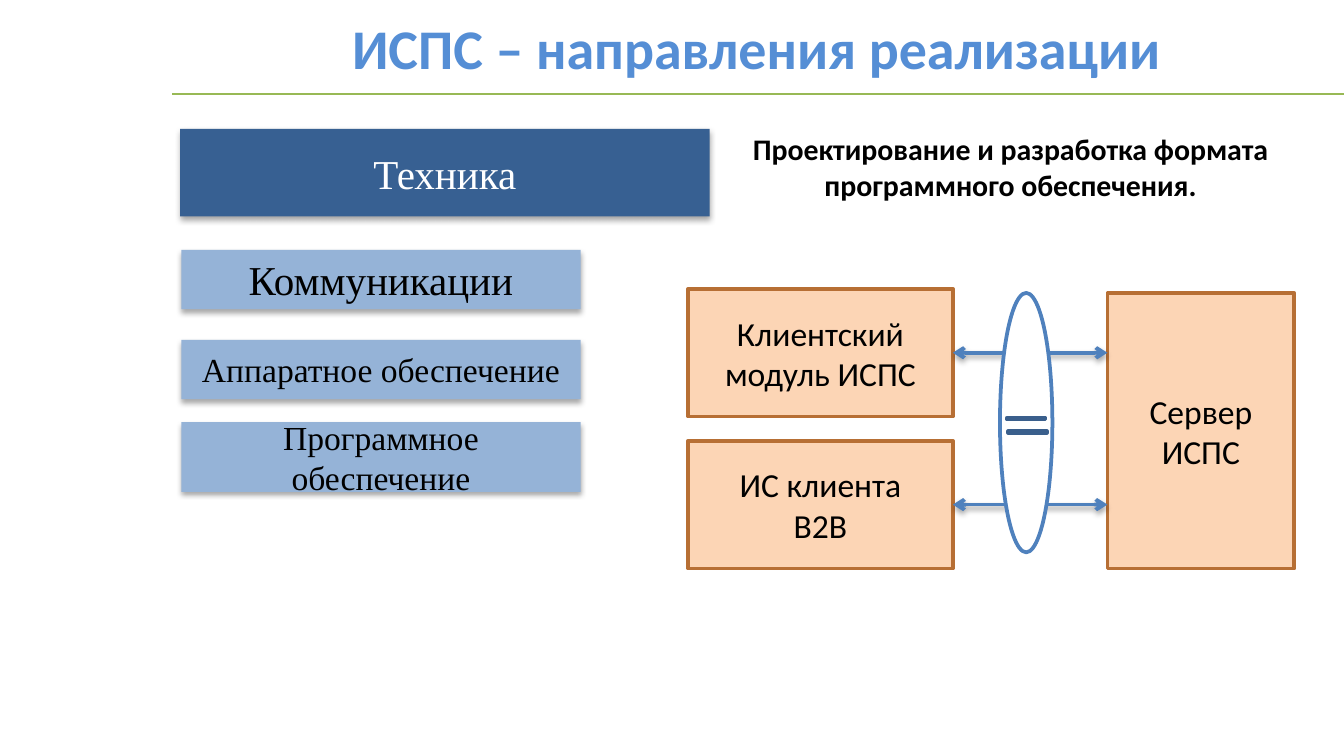
from lxml.etree import SubElement
from pptx import Presentation
from pptx.dml.color import RGBColor
from pptx.enum.shapes import MSO_CONNECTOR as Connector, MSO_SHAPE as Shape
from pptx.enum.text import MSO_ANCHOR as Anchor, MSO_AUTO_SIZE as AutoSize, PP_ALIGN as Align
from pptx.oxml import parse_xml
from pptx.oxml.ns import nsdecls, qn
from pptx.util import Inches, Pt

SERIF = "Times New Roman"
SANS = "Calibri"
BLUE = "4F81BD"
LIGHT_BLUE = "95B3D7"


def color(hex_string):
    return RGBColor.from_string(hex_string)


def write(shape, text, size, font_name, font_color, bold=False):
    """Put centred, wrapped text into a shape and format it."""
    text_frame = shape.text_frame
    text_frame.text = text
    text_frame.word_wrap = True
    for paragraph in text_frame.paragraphs:
        paragraph.alignment = Align.CENTER
        for run in paragraph.runs:
            run.font.size = Pt(size)
            run.font.name = font_name
            run.font.bold = bold
            run.font.color.rgb = color(font_color)


presentation = Presentation()
presentation.slide_width = Inches(10)
presentation.slide_height = Inches(10) * 9 // 16
slide = presentation.slides.add_slide(presentation.slide_layouts[1])
shapes = slide.shapes

# Title and the rule below it
title = shapes.title
title.left, title.top = Inches(1.3), Inches(0.05)
title.width, title.height = Inches(8.66), Inches(0.61)
write(title, "ИСПС – направления реализации", 30, SANS, "558ED5", bold=True)
title.text_frame.auto_size = AutoSize.NONE
title.text_frame.vertical_anchor = Anchor.TOP

rule = shapes.add_connector(
    Connector.STRAIGHT, Inches(1.28), Inches(0.7), Inches(10), Inches(0.7))
rule.line.color.rgb = color("98B955")
rule.line.width = Pt(0.75)
SubElement(rule._element.spPr, qn("a:effectLst"))

# Description
body = slide.placeholders[1]
body.left, body.top = Inches(5.44), Inches(0.92)
body.width, body.height = Inches(4.16), Inches(4.02)
write(body, "Проектирование и разработка формата программного обеспечения.",
      16, SANS, "000000", bold=True)
body.text_frame.auto_size = AutoSize.NONE
description = body.text_frame.paragraphs[0]
description.space_before = Pt(0)
properties = description._p.get_or_add_pPr()
properties.set("marL", "0")
properties.set("indent", "0")
SubElement(properties, qn("a:buNone"))

# Column of directions
directions = [
    ("Техника", 1.34, 0.96, 3.94, 0.65, 22, "376092", "FFFFFF"),
    ("Коммуникации", 1.35, 1.86, 2.97, 0.44, 22, LIGHT_BLUE, "000000"),
    ("Аппаратное обеспечение", 1.35, 2.53, 2.97, 0.44, 18, LIGHT_BLUE, "000000"),
    ("Программное обеспечение", 1.35, 3.14, 2.97, 0.52, 18, LIGHT_BLUE, "000000"),
]
shadow_xml = (
    f'<a:outerShdw {nsdecls("a")} blurRad="{Pt(3.1)}" dist="{Pt(1.8)}" dir="5400000" '
    'rotWithShape="0"><a:srgbClr val="000000"><a:alpha val="35000"/></a:srgbClr></a:outerShdw>'
)
for text, left, top, width, height, size, fill, font_color in directions:
    box = shapes.add_shape(
        Shape.RECTANGLE, Inches(left), Inches(top), Inches(width), Inches(height))
    box.fill.solid()
    box.fill.fore_color.rgb = color(fill)
    box.line.fill.background()
    box.shadow.inherit = False
    box._element.spPr.find(qn("a:effectLst")).append(parse_xml(shadow_xml))
    write(box, text, size, SERIF, font_color)

# Client and server modules
modules = [
    ("Сервер ИСПС", 8.24, 2.18, 1.39, 2.05),
    ("Клиентский модуль ИСПС", 5.12, 2.15, 1.97, 0.95),
    ("ИС клиента\nB2B", 5.12, 3.28, 1.97, 0.95),
]
module_boxes = []
for text, left, top, width, height in modules:
    box = shapes.add_shape(
        Shape.RECTANGLE, Inches(left), Inches(top), Inches(width), Inches(height))
    box.fill.solid()
    box.fill.fore_color.rgb = color("FCD5B5")
    box.line.color.rgb = color("B76F34")
    box.line.width = Pt(2)
    box.shadow.inherit = False
    write(box, text, 18, SANS, "000000")
    module_boxes.append(box)

# Two-way links from each client to the server
server, *clients = module_boxes
for client in clients:
    middle = client.top + client.height // 2
    link = shapes.add_connector(
        Connector.STRAIGHT, client.left + client.width, middle, server.left, middle)
    link.begin_connect(client, 3)
    link.line.color.rgb = color(BLUE)
    link.line.width = Pt(2)
    line = link.line._get_or_add_ln()
    for end in ("a:headEnd", "a:tailEnd"):
        SubElement(line, qn(end), type="arrow")
    effects = SubElement(link._element.spPr, qn("a:effectLst"))
    effects.append(parse_xml(shadow_xml))

# Channel with an equals sign across the links
channel_parts = [
    (Shape.OVAL, 7.44, 2.18, 1.93, "FFFFFF", BLUE),
    (Shape.MATH_MINUS, 7.44, 3.09, 0.05, BLUE, "3A5F8C"),
    (Shape.MATH_MINUS, 7.45, 3.19, 0.05, BLUE, "3A5F8C"),
]
for kind, left, top, height, fill, line_color in channel_parts:
    part = shapes.add_shape(kind, Inches(left), Inches(top), Inches(0.39), Inches(height))
    part.fill.solid()
    part.fill.fore_color.rgb = color(fill)
    part.line.color.rgb = color(line_color)
    part.line.width = Pt(2)
    part.shadow.inherit = False

presentation.save("out.pptx")
